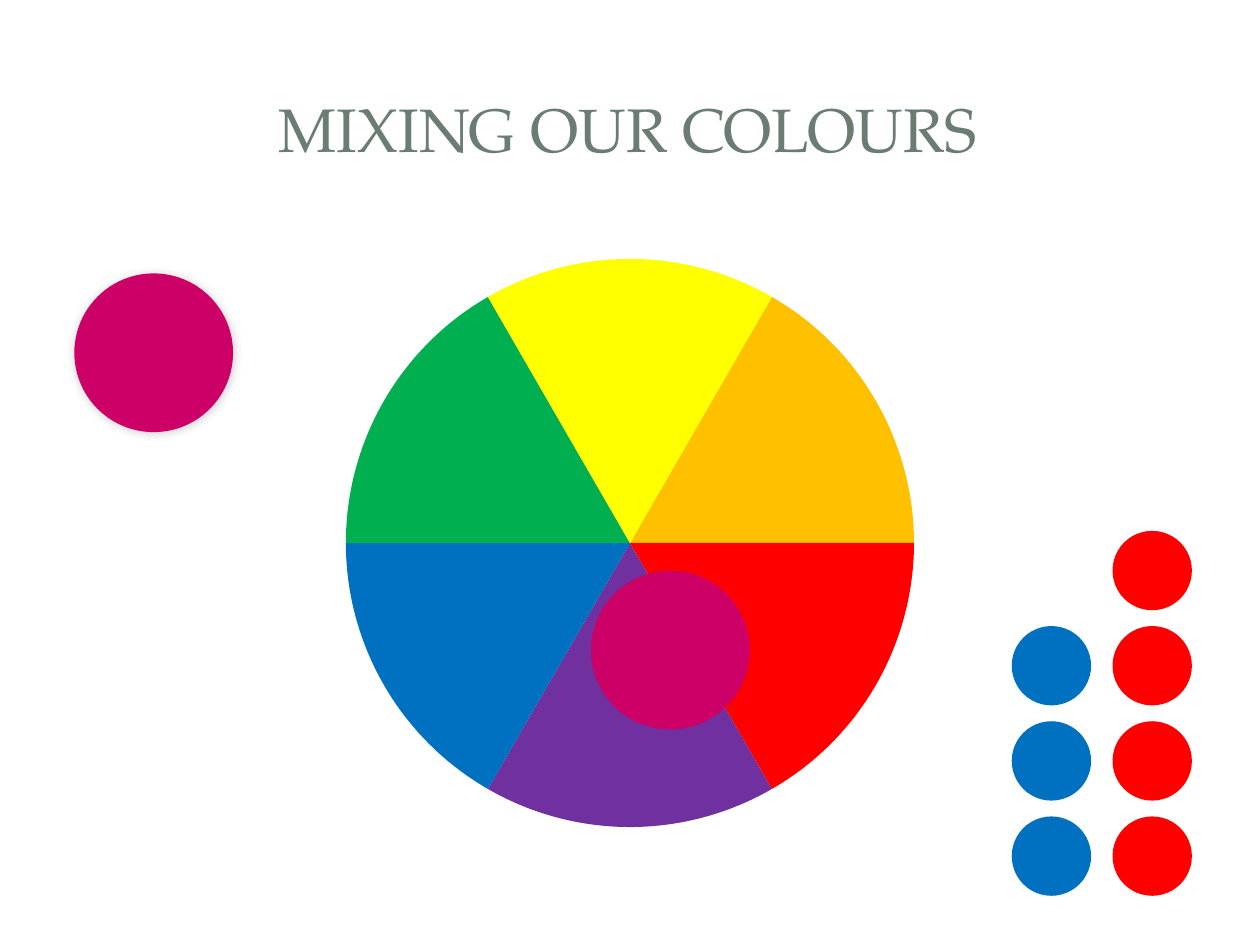
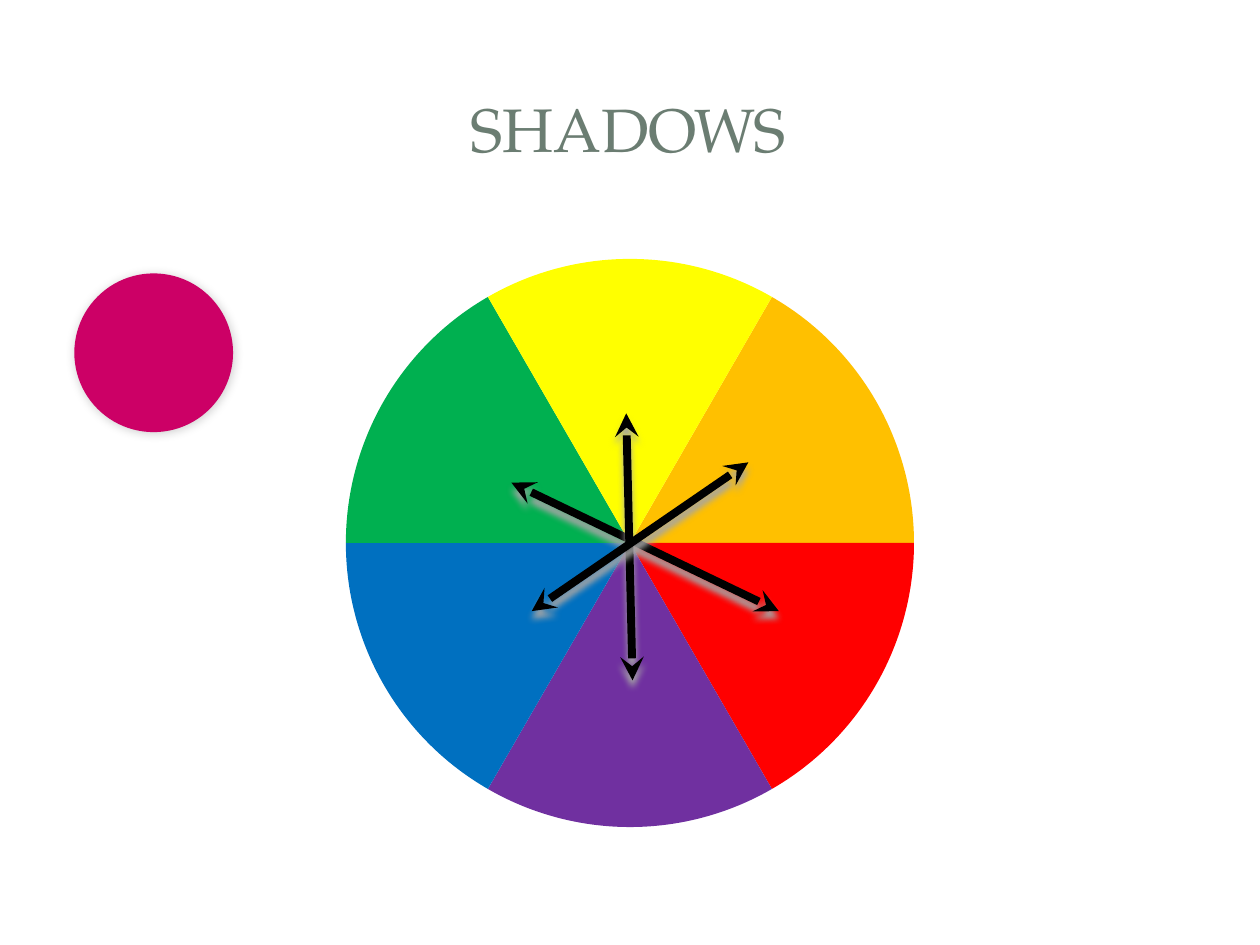
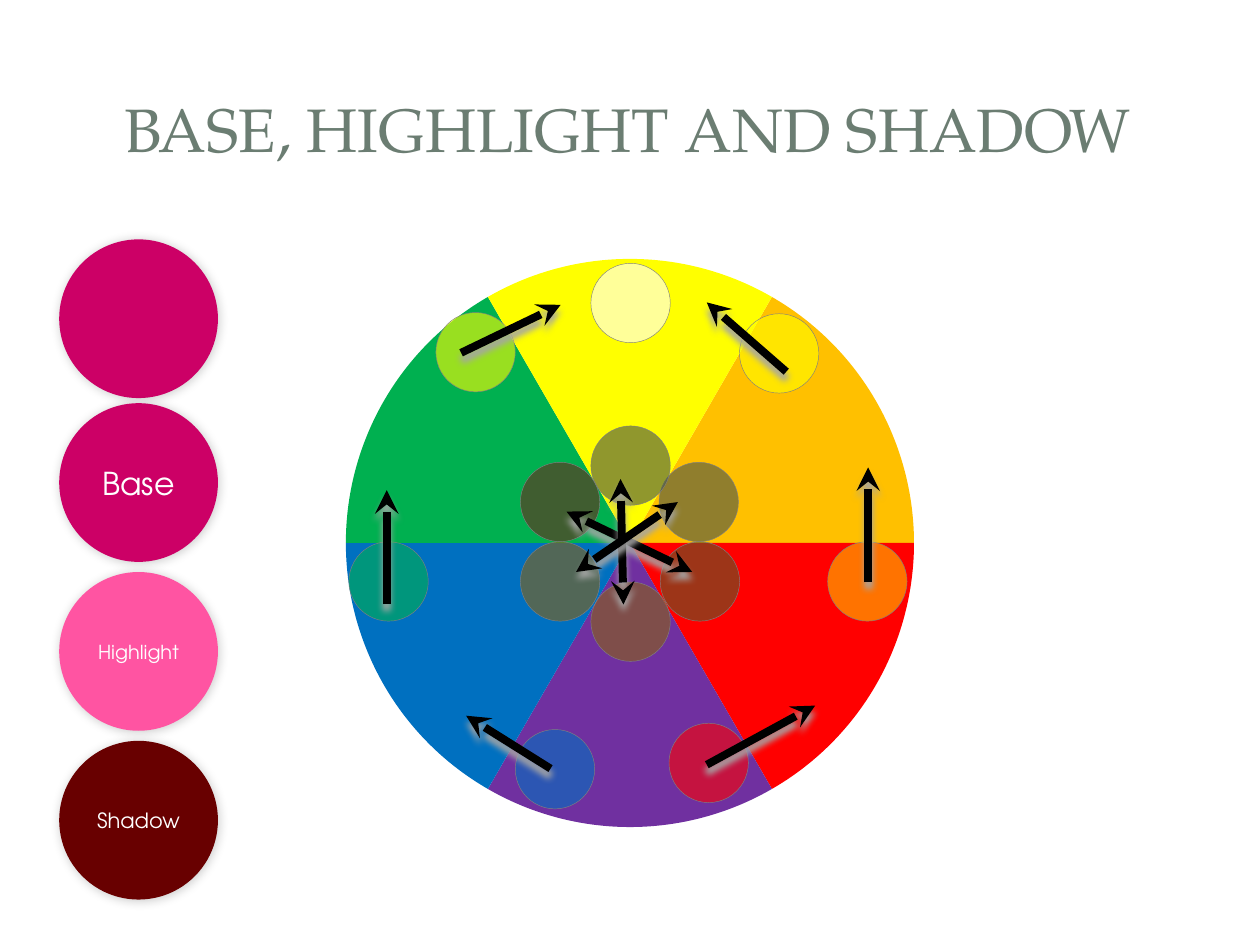
from dataclasses import dataclass

from lxml import etree
from pptx import Presentation
from pptx import util as u
from pptx.chart import data as chart_data, point
from pptx.dml import color
from pptx.enum import chart as charts, shapes, text
from pptx.oxml import ns, parse_xml


@dataclass(frozen=True)
class Theme:
    title: str = "6B7D72"
    white: str = "FFFFFF"
    black: str = "000000"
    magenta: str = "CC0066"
    pink: str = "FF54A2"
    maroon: str = "680000"
    orange: str = "FFC000"
    red: str = "FF0000"
    purple: str = "7030A0"
    blue: str = "0070C0"
    green: str = "00B050"
    yellow: str = "FFFF00"
    olive: str = "5C5928"
    brown: str = "896212"
    slate: str = "47534C"
    rust: str = "6C271B"
    outline: str = "808080"
    heading_font: str = "TeX Gyre Pagella"
    body_font: str = "TeX Gyre Adventor"
    title_size: int = 35
    body_size: int = 18
    swatch: float = 90.72
    dot: float = 45.36
    arrow_width: float = 4.5
    swatch_shadow: tuple = ("000000", 20, 6, 1, 45)
    arrow_shadow: tuple = ("A6A6A6", 100, 4, 4, 90)


THEME = Theme()
SLIDE_SIZE = (720, 540)
TITLE_BOX = (33.84, 32.4, 650.16, 82.08)
WHEEL_BOX = (36, 138.24, 648, 344.16)
WHEEL_DIAMETER = 324.7
WHEEL_START = 30
WHEEL_COLOURS = (THEME.orange, THEME.red, THEME.purple,
                 THEME.blue, THEME.green, THEME.yellow)
SLICE_VALUE = 17

TITLES = ("MIXING OUR COLOURS", "SHADOWS", "BASE, HIGHLIGHT AND SHADOW")
SAMPLE_AT = (42.48, 156.24)
MIXED_AT = (337.68, 326.16)

PAINT_COLUMNS = ((635.76, THEME.red, 4), (578.16, THEME.blue, 3))
PAINT_BOTTOM = 466.56
PAINT_STEP = 54.4

OPPOSITES = ((-76.4, -36.7, 76.4, 36.7),
             (-10.8, -76.3, -7.2, 76.3),
             (-64.8, 36.7, 59, -48.3))
LARGE_CROSS = (368.65, 312.5, 1)
SMALL_CROSS = (359.65, 309.6, 0.47)

SWATCH_LEFT = 33.84
SWATCHES = ((136.8, THEME.magenta, "", THEME.body_size),
            (230.4, THEME.magenta, "Base", THEME.body_size),
            (326.88, THEME.pink, "Highlight", 11),
            (423.36, THEME.maroon, "Shadow", 12))
TINT_OPACITY = 60
HIGHLIGHT_DOTS = ((382.3, 413.3, THEME.red), (294.5, 416.9, THEME.blue),
                  (199.4, 309.6, THEME.green), (249.1, 178.6, THEME.yellow),
                  (473, 309.6, THEME.orange), (422.6, 179.3, THEME.yellow),
                  (337.7, 150.5, THEME.white))
SHADOW_DOTS = ((377.3, 309.6, THEME.olive), (297.4, 309.6, THEME.brown),
               (376.6, 264.2, THEME.slate), (297.4, 264.2, THEME.rust),
               (337.7, 332.6, THEME.brown), (337.7, 243.4, THEME.slate))
HIGHLIGHT_ARROWS = ((403.9, 437, 465.8, 403.2), (496.1, 332.6, 496.1, 267.1),
                    (449.3, 212.4, 403.9, 172.8), (221, 344.9, 221, 280.1),
                    (263.5, 201.6, 320.4, 174.2), (314.6, 439.2, 266.4, 409))


def points(values):
    return [u.Pt(value) for value in values]


def rgb(value):
    return color.RGBColor.from_string(value)


def add_child(parent, tag, **attributes):
    child = etree.SubElement(parent, ns.qn(tag))
    for name, value in attributes.items():
        child.set(name, str(value))
    return child


def add_effects(shape, shadow=None):
    effects = add_child(shape.element.spPr, "a:effectLst")
    if shadow:
        tone, opacity, blur, distance, angle = shadow
        outer = add_child(effects, "a:outerShdw", blurRad=u.Pt(blur),
                          dist=u.Pt(distance), dir=angle * 60000, rotWithShape=0)
        tint = add_child(outer, "a:srgbClr", val=tone)
        add_child(tint, "a:alpha", val=opacity * 1000)


def write(shape, words, font, size, tone):
    frame = shape.text_frame
    frame.text = words
    frame.word_wrap = True
    frame.vertical_anchor = text.MSO_ANCHOR.MIDDLE
    para = frame.paragraphs[0]
    para.alignment = text.PP_ALIGN.CENTER
    for span in para.runs:
        span.font.name = font
        span.font.size = u.Pt(size)
        span.font.color.rgb = rgb(tone)


def add_circle(page, left, top, size, tone, shadow=None, opacity=None):
    circle = page.shapes.add_shape(shapes.MSO_SHAPE.OVAL,
                                   *points((left, top, size, size)))
    circle.fill.solid()
    circle.fill.fore_color.rgb = rgb(tone)
    if opacity:
        tint = circle.element.spPr.find(ns.qn("a:solidFill"))[0]
        add_child(tint, "a:alpha", val=opacity * 1000)
        circle.line.color.rgb = rgb(THEME.outline)
        circle.line.width = u.Pt(0.25)
    else:
        circle.line.fill.background()
    add_effects(circle, shadow)
    return circle


def add_arrow(holder, ends, double=False):
    arrow = holder.shapes.add_connector(shapes.MSO_CONNECTOR.STRAIGHT, *points(ends))
    arrow.line.color.rgb = rgb(THEME.black)
    arrow.line.width = u.Pt(THEME.arrow_width)
    line = arrow.element.spPr.find(ns.qn("a:ln"))
    if double:
        add_child(line, "a:headEnd", type="stealth")
    add_child(line, "a:tailEnd", type="stealth")
    add_effects(arrow, THEME.arrow_shadow)


def add_cross(holder, centre_x, centre_y, scale):
    for x1, y1, x2, y2 in OPPOSITES:
        add_arrow(holder, (centre_x + x1 * scale, centre_y + y1 * scale,
                           centre_x + x2 * scale, centre_y + y2 * scale), double=True)


def place_plot(chart):
    width, height = (WHEEL_DIAMETER / side for side in WHEEL_BOX[2:])
    area = chart.element.find(".//" + ns.qn("c:plotArea"))
    for old in area.findall(ns.qn("c:layout")):
        area.remove(old)
    layout = parse_xml(f"<c:layout {ns.nsdecls('c')}/>")
    area.insert(0, layout)
    manual = add_child(layout, "c:manualLayout")
    for tag, value in (("layoutTarget", "inner"), ("xMode", "edge"), ("yMode", "edge"),
                       ("x", (1 - width) / 2), ("y", (1 - height) / 2),
                       ("w", width), ("h", height)):
        add_child(manual, "c:" + tag, val=value)


def add_wheel(page):
    data = chart_data.CategoryChartData()
    data.categories = ["1", "2", "3", "4", "5"]
    data.add_series("Series 1", [SLICE_VALUE] * len(WHEEL_COLOURS))
    chart = page.shapes.add_chart(charts.XL_CHART_TYPE.PIE,
                                  *points(WHEEL_BOX), data).chart
    chart.has_title = False
    chart.has_legend = False
    chart.font.name = THEME.body_font
    chart.font.size = u.Pt(THEME.body_size)
    chart.font.color.rgb = rgb(THEME.black)
    pie = chart.element.find(".//" + ns.qn("c:pieChart"))
    series = pie.find(ns.qn("c:ser"))
    for index, tone in enumerate(WHEEL_COLOURS):
        fill = point.Point(series, index).format.fill
        fill.solid()
        fill.fore_color.rgb = rgb(tone)
    for old in pie.findall(ns.qn("c:firstSliceAng")):
        pie.remove(old)
    add_child(pie, "c:firstSliceAng", val=WHEEL_START)
    place_plot(chart)


def add_page(deck, title):
    page = deck.slides.add_slide(deck.slide_layouts[6])
    box = page.shapes.add_textbox(*points(TITLE_BOX))
    write(box, title, THEME.heading_font, THEME.title_size, THEME.title)
    add_wheel(page)
    return page


def add_sample(page):
    add_circle(page, *SAMPLE_AT, THEME.swatch, THEME.magenta, THEME.swatch_shadow)


def fill_mixing(page):
    add_sample(page)
    add_circle(page, *MIXED_AT, THEME.swatch, THEME.magenta)
    for left, tone, count in PAINT_COLUMNS:
        for row in range(count):
            add_circle(page, left, PAINT_BOTTOM - row * PAINT_STEP, THEME.dot, tone)


def fill_shadows(page):
    add_sample(page)
    add_cross(page, *LARGE_CROSS)


def fill_base(page):
    for left, top, tone in HIGHLIGHT_DOTS + SHADOW_DOTS:
        add_circle(page, left, top, THEME.dot, tone, opacity=TINT_OPACITY)
    for top, tone, label, size in SWATCHES:
        swatch = add_circle(page, SWATCH_LEFT, top, THEME.swatch, tone,
                            THEME.swatch_shadow)
        if label:
            write(swatch, label, THEME.body_font, size, THEME.white)
    add_cross(page.shapes.add_group_shape(), *SMALL_CROSS)
    for ends in HIGHLIGHT_ARROWS:
        add_arrow(page, ends)


def main():
    deck = Presentation()
    deck.slide_width, deck.slide_height = points(SLIDE_SIZE)
    for title, fill_page in zip(TITLES, (fill_mixing, fill_shadows, fill_base)):
        fill_page(add_page(deck, title))
    deck.save("out.pptx")


if __name__ == "__main__":
    main()
